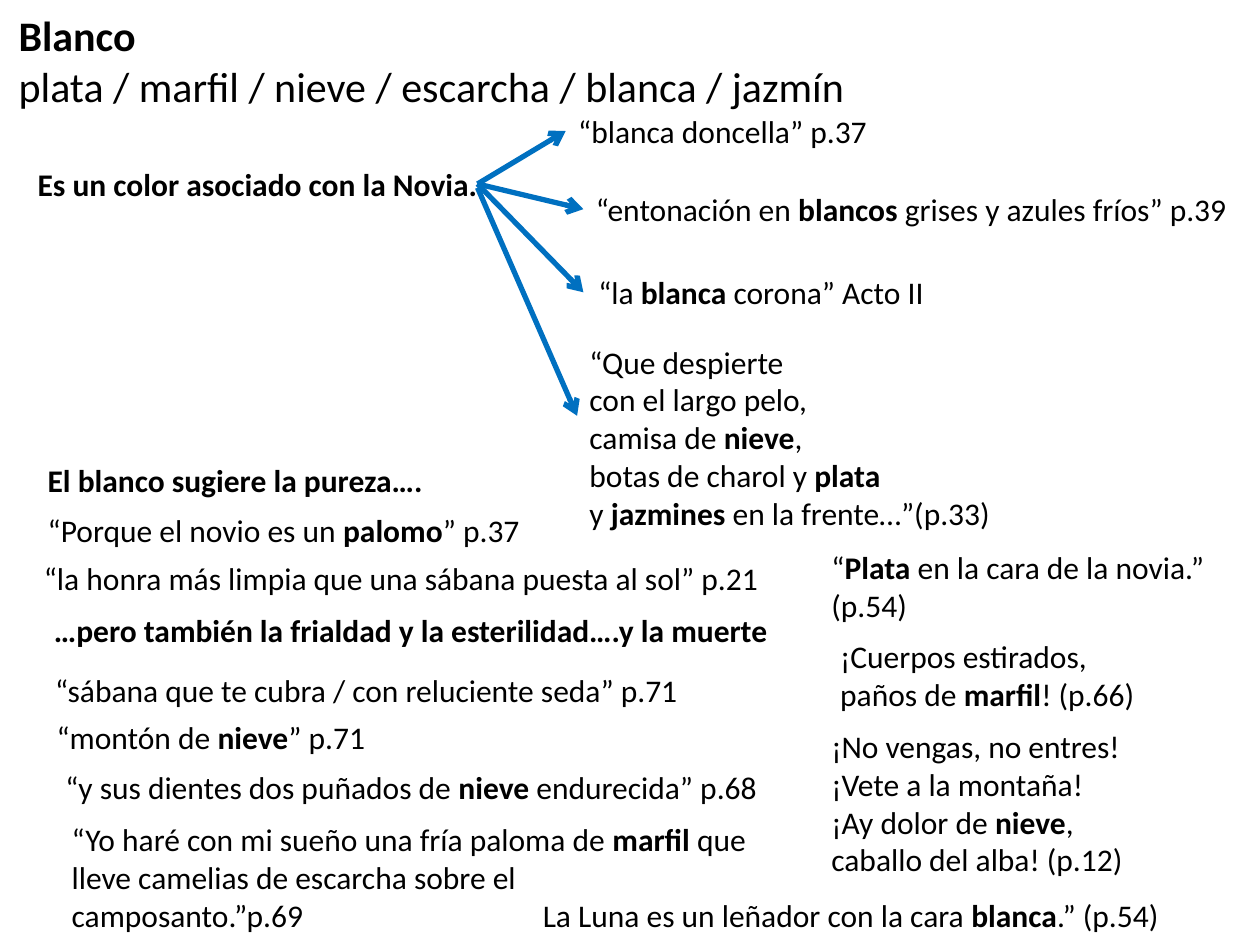
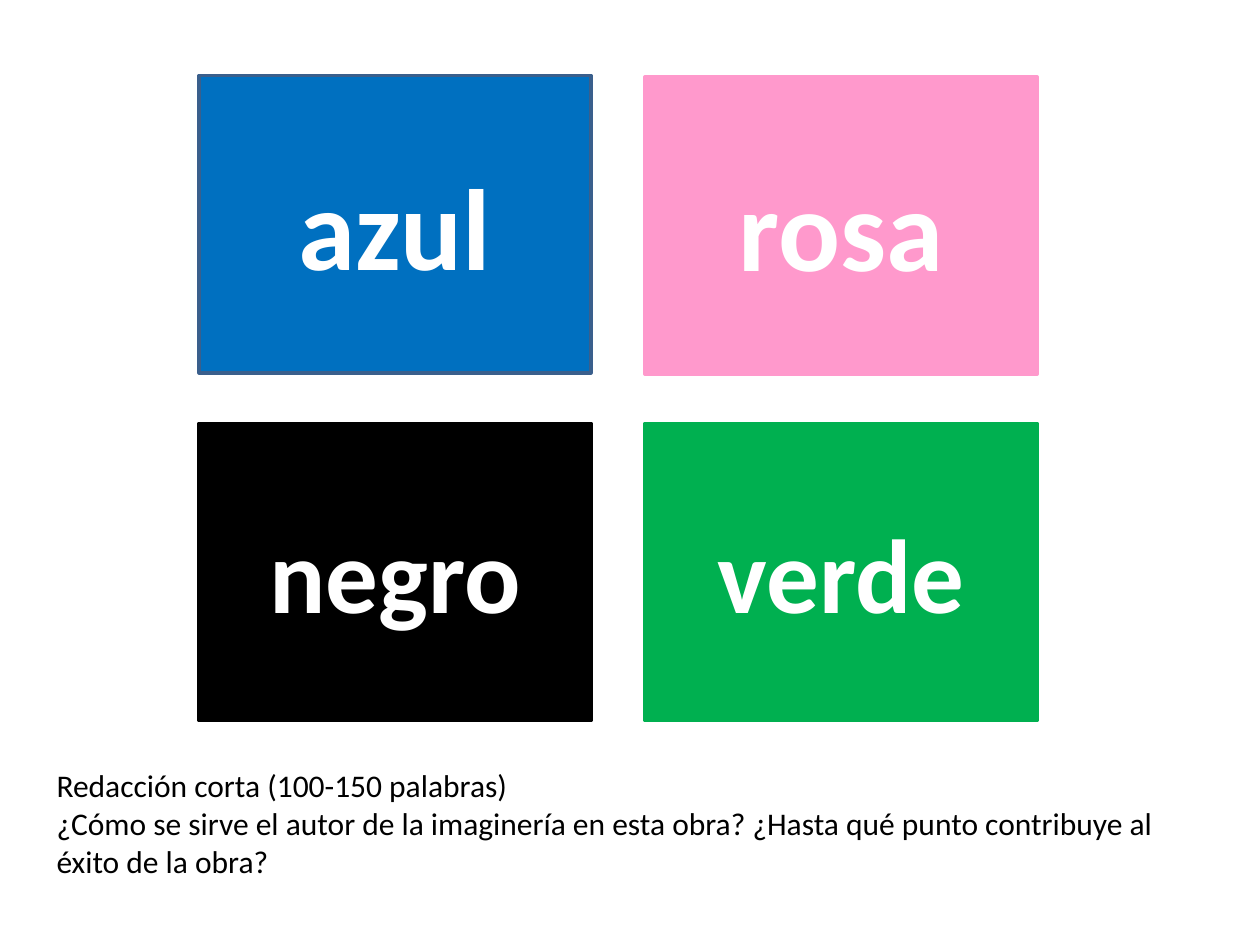
from lxml import etree
from pptx import Presentation
from pptx import util as u
from pptx.dml.color import RGBColor
from pptx.enum import shapes, text
from pptx.oxml.ns import qn

PX = 9144  # 100 px to the inch
FONT = "Calibri"
BLACK, WHITE, BLUE = "000000", "FFFFFF", "0070C0"

HEADING = ("*Blanco*\n"
           "plata / marfil / nieve / escarcha / blanca / jazmín")
BRIDE = "*Es un color asociado con la Novia.*"

# left, top, width, height, text, arrow start, arrow end (None: joined to the box)
BRIDE_QUOTES = [
    (449, 84, 258, 40, "“blanca doncella” p.37", (379, 146), None),
    (463, 146, 525, 40, "“entonación en *blancos* grises y azules fríos” p.39",
     (379, 146), None),
    (465, 212, 280, 40, "“la *blanca* corona” Acto II", (379, 146), (463, 232)),
    (458, 267, 500, 162,
     "“Que despierte\ncon el largo pelo,\ncamisa de *nieve*,\n"
     "botas de charol y *plata*\ny *jazmines* en la frente…”(p.33)",
     (379, 149), (458, 330)),
]

# left, top, width, text
SINGLE_LINES = [
    (28, 361, 326, "*El blanco sugiere la pureza….*"),
    (28, 401, 402, "“Porque el novio es un *palomo*” p.37"),
    (25, 439, 594, "“la honra más limpia que una sábana puesta al sol” p.21"),
    (33, 480, 597, "*…pero también la frialdad y la esterilidad….y la muerte*"),
    (34, 528, 526, "“sábana que te cubra / con reluciente seda” p.71"),
    (35, 565, 272, "“montón de *nieve*” p.71"),
    (42, 605, 580, "“y sus dientes dos puñados de *nieve* endurecida” p.68"),
    (421, 706, 520, "La Luna es un leñador con la cara *blanca*.” (p.54)"),
]

# left, top, width, height, text
VERSES = [
    (650, 430, 331, 71, "“*Plata* en la cara de la novia.” (p.54)"),
    (657, 501, 500, 71, "¡Cuerpos estirados,\npaños de *marfil*! (p.66)"),
    (650, 572, 500, 131,
     "¡No vengas, no entres!\n¡Vete a la montaña!\n"
     "¡Ay dolor de *nieve*,\ncaballo del alba! (p.12)"),
    (47, 646, 558, 101,
     "“Yo haré con mi sueño una fría paloma de *marfil* que lleve camelias "
     "de escarcha sobre el camposanto.”p.69"),
]

# left, top, name, fill, line, text size
COLOUR_CARDS = [
    (158, 60, "azul", BLUE, "3A5F8C", 66),
    (512, 61, "rosa", "FF99CC", "FF99CC", 66),
    (158, 336, "negro", BLACK, BLACK, 60),
    (512, 336, "verde", "00B050", "00B050", 60),
]
CARD_SIZE = (311, 236)

TASK = ("Redacción corta (100-150 palabras)\n"
        "¿Cómo se sirve el autor de la imaginería en esta obra? "
        "¿Hasta qué punto contribuye al éxito de la obra?")


def px(*lengths):
    return [u.Emu(n * PX) for n in lengths]


def rgb(hex_colour):
    return RGBColor.from_string(hex_colour)


def style_run(r, size, colour, bold):
    r.font.name = FONT
    r.font.size = u.Pt(size)
    r.font.color.rgb = rgb(colour)
    r.font.bold = bold


def write(p, marked, size=18, colour=BLACK):
    """Fill a paragraph; *stars* mark bold and newlines become line breaks."""
    for row, line in enumerate(marked.split("\n")):
        if row:
            p.add_line_break()
        for i, part in enumerate(line.split("*")):
            if part:
                r = p.add_run()
                r.text = part
                style_run(r, size, colour, bold=i % 2 == 1)


def add_text(slide, left, top, width, height, marked, size=18, wrap=True):
    box = slide.shapes.add_textbox(*px(left, top, width, height))
    tf = box.text_frame
    tf.word_wrap = wrap
    tf.auto_size = text.MSO_AUTO_SIZE.SHAPE_TO_FIT_TEXT
    write(tf.paragraphs[0], marked, size)
    return box


def add_arrow(slide, start, end, target=None):
    """Draw an arrow to a point, or to the left side of the target box."""
    line = slide.shapes.add_connector(
        shapes.MSO_CONNECTOR.STRAIGHT, *px(*start, *(end or start)))
    if target is not None:
        line.end_connect(target, 1)
    line.line.color.rgb = rgb(BLUE)
    line.line.width = u.Pt(3)
    etree.SubElement(line.line._get_or_add_ln(), qn("a:tailEnd"), type="arrow")
    etree.SubElement(line._element.spPr, qn("a:effectLst"))


def add_card(slide, left, top, name, fill, outline, size):
    sp = slide.shapes.add_shape(
        shapes.MSO_SHAPE.RECTANGLE, *px(left, top, *CARD_SIZE))
    sp.shadow.inherit = False
    sp.fill.solid()
    sp.fill.fore_color.rgb = rgb(fill)
    sp.line.color.rgb = rgb(outline)
    sp.line.width = u.Pt(2)
    tf = sp.text_frame
    tf.vertical_anchor = text.MSO_ANCHOR.MIDDLE
    p = tf.paragraphs[0]
    p.alignment = text.PP_ALIGN.CENTER
    write(p, f"*{name}*", size, WHITE)


def build_white_slide(slide):
    add_text(slide, 5, 3, 1317, 91, HEADING, size=24)
    add_text(slide, 20, 126, 372, 40, BRIDE, wrap=False)
    for left, top, width, height, quote, start, end in BRIDE_QUOTES:
        box = add_text(slide, left, top, width, height, quote,
                       wrap="\n" in quote)
        add_arrow(slide, start, end, None if end else box)
    for left, top, width, line in SINGLE_LINES:
        add_text(slide, left, top, width, 40, line, wrap=False)
    for verse in VERSES:
        add_text(slide, *verse)


def build_colours_slide(slide):
    for card in COLOUR_CARDS:
        add_card(slide, *card)
    add_text(slide, 35, 603, 929, 131, TASK)


def main():
    prs = Presentation()
    prs.slide_width, prs.slide_height = px(1000, 750)
    for build in (build_white_slide, build_colours_slide):
        build(prs.slides.add_slide(prs.slide_layouts[6]))
    prs.save("out.pptx")


if __name__ == "__main__":
    main()
